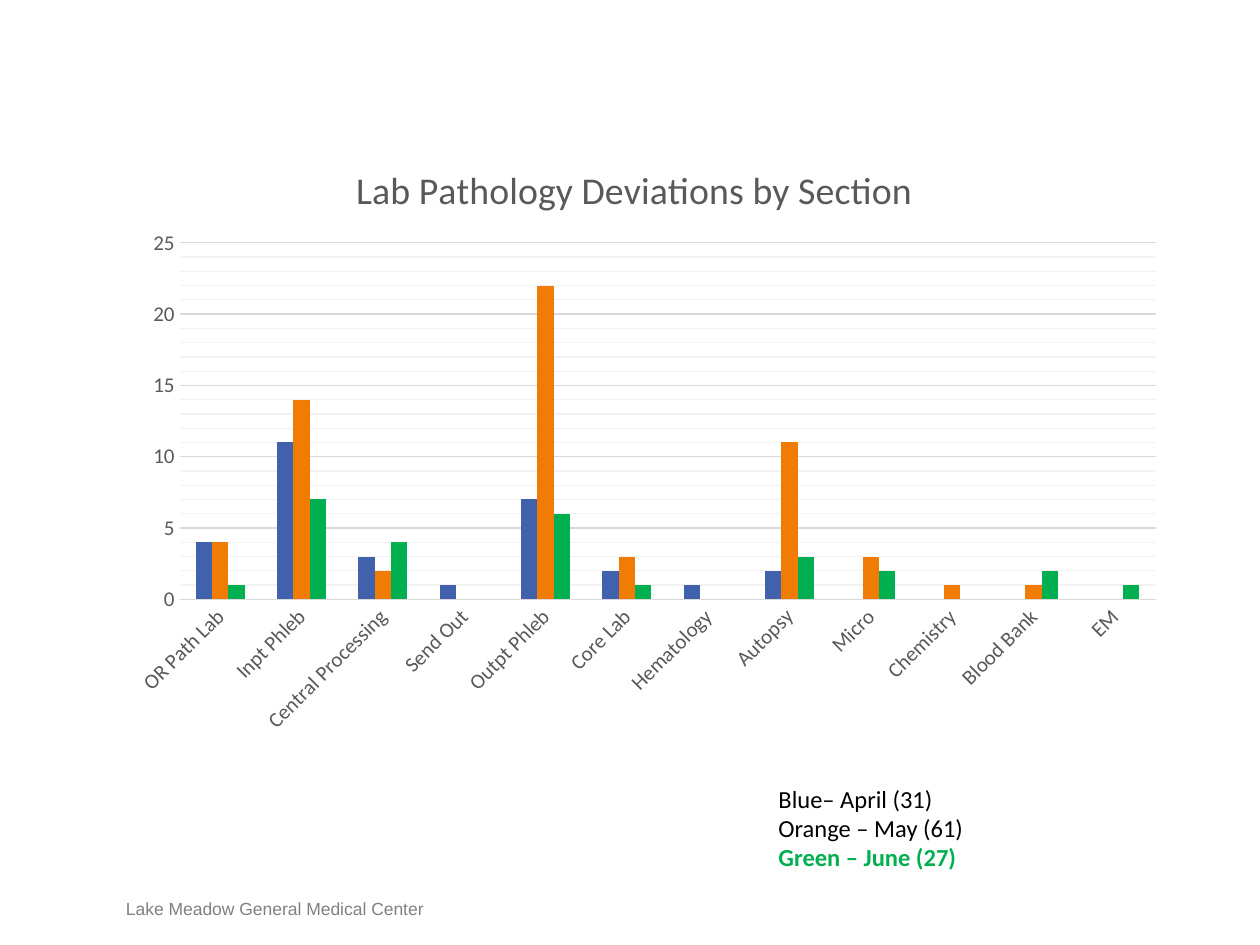
from pptx import Presentation, util as u
from pptx.chart.data import CategoryChartData
from pptx.dml.color import RGBColor
from pptx.enum import chart as ch, text
from pptx.oxml import parse_xml
from pptx.oxml.ns import nsdecls, qn

HUES = {"april": "4261AD", "may": "F07B05", "june": "00B050", "label": "595959",
        "grid": "D9D9D9", "minor": "F2F2F2", "ink": "000000", "foot": "808080"}
WIDE, HIGH = 10, 7.5
CATS = ["OR Path Lab", "Inpt Phleb", "Central Processing", "Send Out",
        "Outpt Phleb", "Core Lab", "Hematology", "Autopsy", "Micro",
        "Chemistry", "Blood Bank", "EM"]
DATA = {"april": [4, 11, 3, 1, 7, 2, 1, 2, None, None, None, None],
        "may": [4, 14, 2, None, 22, 3, None, 11, 3, 1, 1, None],
        "june": [1, 7, 4, None, 6, 1, None, 3, 2, None, 2, 1]}


def style(item, **vals):
    """Set each attribute of an item from the given values."""
    for key, val in vals.items():
        setattr(item, key, val)


def ink(font, size, hue, name="Calibri", bold=False):
    """Format a font."""
    style(font, size=u.Pt(size), name=name, bold=bold)
    font.color.rgb = RGBColor.from_string(HUES[hue])


def rule(line, hue):
    """Format a thin chart line."""
    line.width = u.Pt(0.75)
    line.color.rgb = RGBColor.from_string(HUES[hue])


def faint(axis, hue):
    """Colour the minor grid lines of an axis."""
    axis._element.find(qn("c:minorGridlines")).append(parse_xml(
        f'<c:spPr {nsdecls("c", "a")}><a:ln w="{u.Pt(0.75)}"><a:solidFill>'
        f'<a:srgbClr val="{HUES[hue]}"/></a:solidFill></a:ln></c:spPr>'))


def place(node, index, **parts):
    """Give a chart element a manual layout in shares of the chart."""
    for old in node.findall(qn("c:layout")):
        node.remove(old)
    inner = '<c:layoutTarget val="inner"/>' if "w" in parts else ""
    modes = "".join(f'<c:{k}Mode val="edge"/>' for k in "xy")
    sizes = "".join(f'<c:{k} val="{v}"/>' for k, v in parts.items())
    node.insert(index, parse_xml(
        f'<c:layout {nsdecls("c")}><c:manualLayout>{inner}{modes}{sizes}'
        '</c:manualLayout></c:layout>'))


def write(slide, box, lines, size, name="Calibri", **frame):
    """Add a text box of (words, hue, bold) lines."""
    area = slide.shapes.add_textbox(*map(u.Inches, box)).text_frame
    style(area, word_wrap=True, **frame)
    for n, (words, hue, bold) in enumerate(lines):
        para = area.add_paragraph() if n else area.paragraphs[0]
        run = para.add_run()
        run.text = words
        ink(run.font, size, hue, name, bold)


def head(chart, words):
    """Add the chart title."""
    area = chart.chart_title.text_frame
    area.text = words
    ink(area.paragraphs[0].runs[0].font, 21.6, "label")
    place(chart.chart_title._element, 1, x=0.22, y=0.05)


def axes(chart):
    """Format both axes and the grid lines."""
    cat, val = chart.category_axis, chart.value_axis
    for axis in (cat, val):
        style(axis, major_tick_mark=ch.XL_TICK_MARK.NONE,
              minor_tick_mark=ch.XL_TICK_MARK.NONE)
        ink(axis.tick_labels.font, 12, "label")
    rule(cat.format.line, "grid")
    cat._element.find(qn("c:txPr")).find(qn("a:bodyPr")).set("rot", "-2700000")
    style(val, minimum_scale=0, maximum_scale=25, major_unit=5, minor_unit=1,
          has_major_gridlines=True, has_minor_gridlines=True)
    val.format.line.fill.background()
    rule(val.major_gridlines.format.line, "grid")
    faint(val, "minor")


def bars(slide, box):
    """Add the clustered column chart."""
    data = CategoryChartData()
    data.categories = CATS
    for n, vals in enumerate(DATA.values(), 1):
        data.add_series(f"Series {n}", vals)
    chart = slide.shapes.add_chart(ch.XL_CHART_TYPE.COLUMN_CLUSTERED,
                                   *map(u.Inches, box), data).chart
    ink(chart.font, 10, "ink")
    chart.has_legend = False
    plot = chart.plots[0]
    style(plot, gap_width=199, overlap=0, vary_by_categories=False)
    for hue, row in zip(DATA, plot.series):
        row.invert_if_negative = False
        row.format.fill.solid()
        row.format.fill.fore_color.rgb = RGBColor.from_string(HUES[hue])
    head(chart, "Lab Pathology Deviations by Section")
    axes(chart)
    place(chart._chartSpace.chart.plotArea, 0, x=0.06, y=0.19, w=0.92, h=0.58)


def main():
    """Build the slide."""
    deck = Presentation()
    style(deck, slide_width=u.Inches(WIDE), slide_height=u.Inches(HIGH))
    slide = deck.slides.add_slide(deck.slide_layouts[6])
    write(slide, (WIDE * 0.1, HIGH * 0.95, 3.17, 0.17),
          [("Lake Meadow General Medical Center", "foot", False)], 10, "Arial",
          vertical_anchor=text.MSO_ANCHOR.BOTTOM, margin_left=0, margin_top=0,
          margin_right=0, margin_bottom=0)
    bars(slide, (0.92, 1, 8.42, 4.88))
    write(slide, (6.08, 6.17, 2.67, 1.04),
          [("Blue– April (31)", "ink", False),
           ("Orange – May (61)", "ink", False),
           ("Green – June (27)", "june", True)], 14)
    deck.save("out.pptx")


if __name__ == "__main__":
    main()
